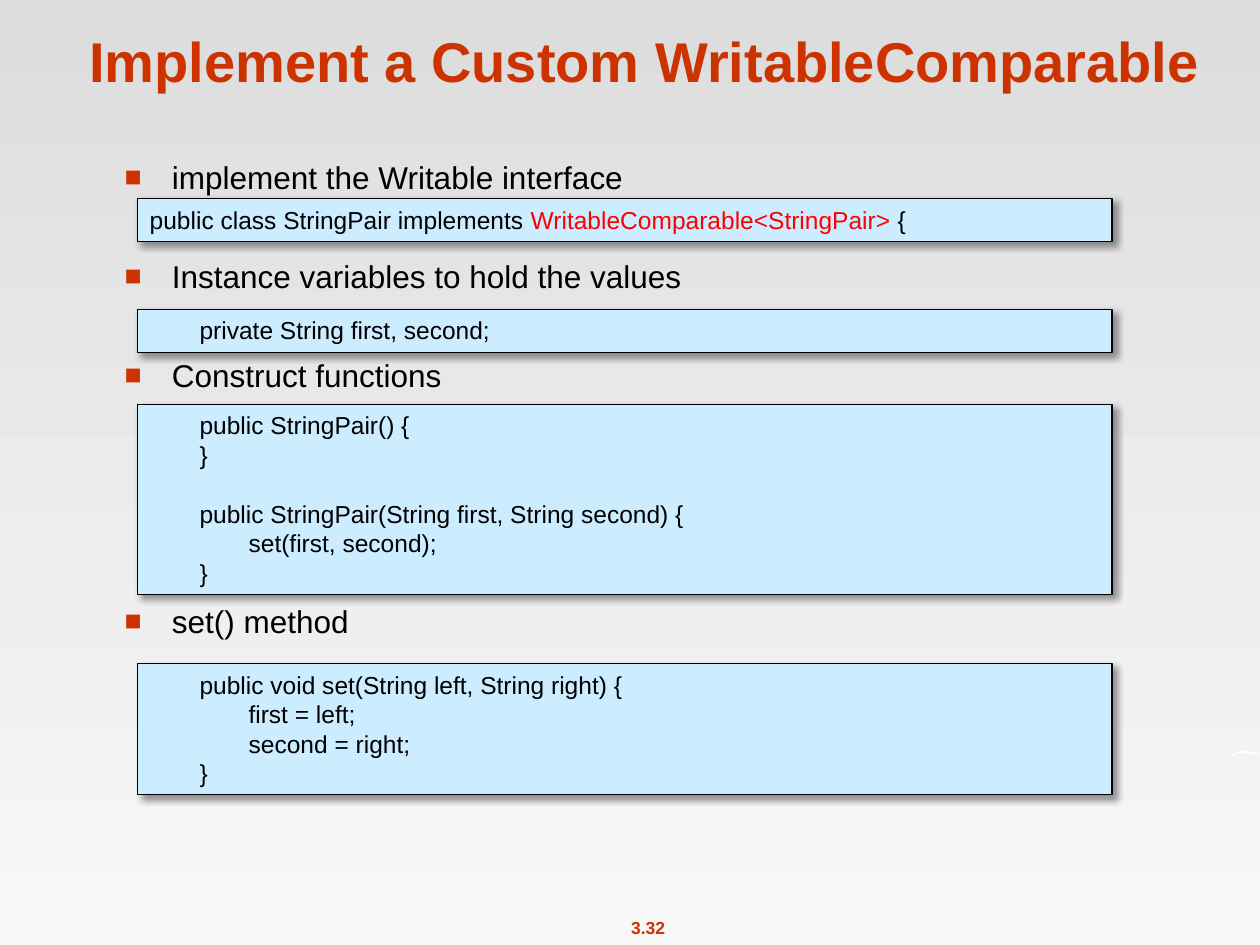
from dataclasses import dataclass

from lxml import etree
from pptx import Presentation
from pptx.dml.color import RGBColor
from pptx.enum.shapes import MSO_SHAPE
from pptx.enum.text import MSO_ANCHOR, MSO_AUTO_SIZE, PP_ALIGN
from pptx.oxml.ns import nsdecls
from pptx.util import Pt

RECT = MSO_SHAPE.RECTANGLE
TOP, BOTTOM = MSO_ANCHOR.TOP, MSO_ANCHOR.BOTTOM
NO_FIT = MSO_AUTO_SIZE.NONE
LEFT, CENTER = PP_ALIGN.LEFT, PP_ALIGN.CENTER


@dataclass
class Theme:
    font: str = "Arial"
    accent: str = "CC3300"
    ink: str = "000000"
    mark: str = "FF0000"
    panel: str = "CCECFF"
    white: str = "FFFFFF"
    back: tuple = ("DDDDDD", "F8F8F8")
    title: int = 32
    body: int = 18
    code: int = 14
    small: int = 10


theme = Theme()
rgb = RGBColor.from_string


def style(font, size, color, bold=False):
    font.name, font.size, font.bold = theme.font, Pt(size), bold
    font.color.rgb = rgb(color)


def add_xml(parent, *parts):
    """Append XML fragments whose root tags are in the a: namespace."""
    for part in parts:
        tag, rest = part.split(" ", 1)
        parent.append(etree.fromstring(f"{tag} {nsdecls('a')} {rest}"))


prs = Presentation()
prs.slide_width, prs.slide_height = Pt(720), Pt(540)
slide = prs.slides.add_slide(prs.slide_layouts[1])
shapes = slide.shapes

# Background
fill = slide.background.fill
fill.gradient()
fill.gradient_angle = 270
for stop, color in zip(fill.gradient_stops, theme.back):
    stop.color.rgb = rgb(color)

# White swirl at the right edge
edge = [(704, 431), (707, 430), (711, 429), (717, 430), (720, 430.6),
        (718, 431.3), (714, 430.6), (711, 430), (707, 430.6), (703, 432)]
pen = shapes.build_freeform(Pt(702), Pt(432.5), scale=1.0)
pen.add_line_segments([(Pt(x), Pt(y)) for x, y in edge], close=True)
swirl = pen.convert_to_shape()
swirl.shadow.inherit = False
swirl.fill.solid()
swirl.fill.fore_color.rgb = rgb(theme.white)
swirl.line.fill.background()

# Title
title = shapes.title
title.left, title.top, title.width, title.height = Pt(29.5), Pt(9.4), Pt(678), Pt(48)
frame = title.text_frame
frame.text = "Implement a Custom WritableComparable"
frame.auto_size, frame.vertical_anchor = NO_FIT, BOTTOM
para = frame.paragraphs[0]
para.alignment = CENTER
style(para.font, theme.title, theme.accent, True)

# Bullet list, spaced to leave room for the code panels
body = slide.placeholders[1]
body.left, body.top, body.width, body.height = Pt(64), Pt(86.4), Pt(603.5), Pt(386)
items = [
    ("implement the Writable interface", 0),
    ("Instance variables to hold the values", 35),
    ("Construct functions", 35),
    ("set() method", 119),
]
frame = body.text_frame
frame.text = "\n".join(text for text, _ in items)
frame.auto_size, frame.vertical_anchor = NO_FIT, TOP
for para, (_, gap) in zip(frame.paragraphs, items):
    para.space_before = Pt(gap)
    style(para.font, theme.body, theme.ink)
    props = para._p.get_or_add_pPr()
    props.set("marL", str(Pt(27)))
    props.set("indent", str(Pt(-27)))
    add_xml(props,
            f'<a:buClr ><a:srgbClr val="{theme.accent}"/></a:buClr>',
            '<a:buSzPct val="90000"/>',
            f'<a:buFont typeface="{theme.font}"/>',
            '<a:buChar char="■"/>')

# Code panels: top, then lines of (text, color) runs; None is a skipped line
ink = theme.ink
panels = [
    (113.5, [[("public class StringPair implements ", ink),
              ("WritableComparable<StringPair> ", theme.mark), ("{", ink)]]),
    (176.7, [[("\tprivate String first, second;", ink)]]),
    (231, [[("\tpublic StringPair() {", ink)],
           [("\t}", ink)],
           None,
           [("\tpublic StringPair(String first, String second) {", ink)],
           [("\t\tset(first, second);", ink)],
           [("\t}", ink)]]),
    (379.2, [[("\tpublic void set(String left, String right) {", ink)],
             [("\t\tfirst = left;", ink)],
             [("\t\tsecond = right;", ink)],
             [("\t}", ink)]]),
]
pitch = 16.8
stops = "".join(f'<a:tab pos="{Pt(x)}" algn="l"/>' for x in (28.5, 56.5, 84.5, 113, 142))
for top, lines in panels:
    panel = shapes.add_shape(RECT, Pt(78.5), Pt(top), Pt(557), Pt(len(lines) * pitch + 7.8))
    panel.fill.solid()
    panel.fill.fore_color.rgb = rgb(theme.panel)
    panel.line.color.rgb = rgb(ink)
    panel.line.width = Pt(0.75)
    panel.shadow.inherit = False
    effects = panel._element.spPr.find("{*}effectLst")
    add_xml(effects,
            f'<a:outerShdw blurRad="{Pt(4)}" dist="{Pt(3)}" dir="2700000" algn="tl" '
            f'rotWithShape="0"><a:srgbClr val="{ink}"><a:alpha val="40000"/>'
            '</a:srgbClr></a:outerShdw>')
    frame = panel.text_frame
    frame.word_wrap, frame.vertical_anchor = True, TOP
    para, gap = frame.paragraphs[0], 0
    for num, line in enumerate(lines):
        if line is None:
            gap = pitch
            continue
        if num:
            para = frame.add_paragraph()
        para.alignment, para.line_spacing = LEFT, Pt(pitch)
        para.space_before, gap = Pt(gap), 0
        add_xml(para._p.get_or_add_pPr(), f"<a:tabLst >{stops}</a:tabLst>")
        style(para.font, theme.code, ink)
        for text, color in line:
            run = para.add_run()
            run.text = text
            if color != ink:
                run.font.color.rgb = rgb(color)

# Page number
page = shapes.add_textbox(Pt(352.8), Pt(520.5), Pt(35), Pt(19.5))
frame = page.text_frame
frame.word_wrap = False
frame.text = "3.32"
para = frame.paragraphs[0]
para.alignment = CENTER
para.space_before = Pt(0)
style(para.font, theme.small, theme.accent, True)

prs.save("out.pptx")
